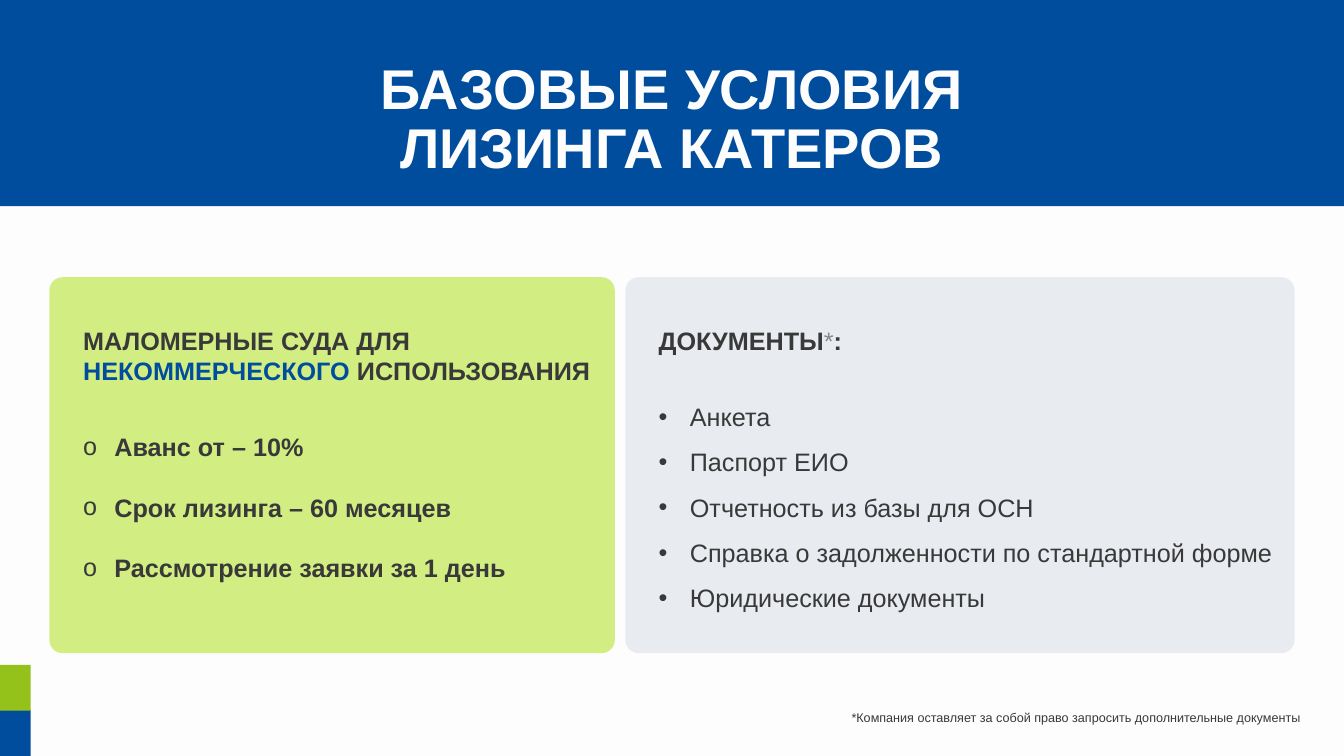
from dataclasses import dataclass
from lxml import etree
from pptx import Presentation
from pptx.dml.color import RGBColor
from pptx.enum.shapes import MSO_SHAPE
from pptx.enum.text import MSO_ANCHOR, MSO_AUTO_SIZE, PP_ALIGN
from pptx.oxml.ns import qn
from pptx.util import Inches, Pt

RECT = MSO_SHAPE.RECTANGLE
ROUND = MSO_SHAPE.ROUNDED_RECTANGLE
TOP = MSO_ANCHOR.TOP
FIXED = MSO_AUTO_SIZE.NONE
CENTER = PP_ALIGN.CENTER
RIGHT = PP_ALIGN.RIGHT
FONT = "Arial"
COLORS = {
    "paper": "FDFDFD", "blue": "004D9E", "green": "94C11A", "lime": "D2EE82",
    "mist": "E8EBF0", "ink": "393939", "gray": "888888",
}


@dataclass
class Box:
    left: float
    top: float
    width: float
    height: float

    def emu(self) -> tuple:
        return tuple(Inches(n) for n in (self.left, self.top, self.width, self.height))


@dataclass
class Card:
    box: Box
    fill: str
    text: Box
    head: list
    items: list
    mark: str
    first: float
    gap: float
    bold: bool


def color(name: str) -> RGBColor:
    return RGBColor.from_string(COLORS[name])


def style(font, size: float, bold: bool, name: str) -> None:
    font.name = FONT
    font.size = Pt(size)
    font.bold = bold
    font.color.rgb = color(name)


def block(slide, box: Box, fill: str, kind=RECT):
    shape = slide.shapes.add_shape(kind, *box.emu())
    shape.shadow.inherit = False
    shape.fill.solid()
    shape.fill.fore_color.rgb = color(fill)
    shape.line.fill.background()
    return shape


def setup(frame) -> None:
    frame.word_wrap = True
    frame.auto_size = FIXED
    frame.vertical_anchor = TOP
    frame.margin_left = frame.margin_right = 0
    frame.margin_top = frame.margin_bottom = 0


def bullet(para, mark: str) -> None:
    props = para._p.get_or_add_pPr()
    props.set("marL", str(Inches(0.62)))
    props.set("indent", str(-Inches(0.62)))
    etree.SubElement(props, qn("a:buFont")).set("typeface", FONT)
    etree.SubElement(props, qn("a:buChar")).set("char", mark)


def draw(slide, card: Card) -> None:
    block(slide, card.box, card.fill, ROUND).adjustments[0] = 0.035
    frame = slide.shapes.add_textbox(*card.text.emu()).text_frame
    setup(frame)
    head = frame.paragraphs[0]
    style(head.font, 36, True, "ink")
    for words, tint, bold in card.head:
        if words == "\n":
            head.add_line_break()
            continue
        run = head.add_run()
        run.text = words
        style(run.font, 36, bold, tint)
    for i, item in enumerate(card.items):
        para = frame.add_paragraph()
        para.text = item
        para.line_spacing = card.gap if i else card.first
        bullet(para, card.mark)
        style(para.font, 36, card.bold, "ink")


CARDS = [
    Card(
        Box(12.41, 5.5, 13.28, 7.46), "mist", Box(13.07, 6.46, 12.42, 6.06),
        [("ДОКУМЕНТЫ", "ink", True), ("*", "gray", False), (":", "ink", True)],
        ["Анкета", "Паспорт ЕИО", "Отчетность из базы для ОСН",
         "Справка о задолженности по стандартной форме", "Юридические документы"],
        "•", 2.5, 1.5, False,
    ),
    Card(
        Box(0.98, 5.5, 11.22, 7.46), "lime", Box(1.65, 6.46, 10.33, 4.96),
        [("МАЛОМЕРНЫЕ СУДА ДЛЯ", "ink", True), ("\n", "ink", True),
         ("НЕКОММЕРЧЕСКОГО", "blue", True), (" ИСПОЛЬЗОВАНИЯ", "ink", True)],
        ["Аванс от – 10%", "Срок лизинга – 60 месяцев", "Рассмотрение заявки за 1 день"],
        "o", 2.5, 2.0, True,
    ),
]


def main() -> None:
    deck = Presentation()
    deck.slide_width = Inches(26.67)
    deck.slide_height = Inches(15)
    slide = deck.slides.add_slide(deck.slide_layouts[5])
    slide.background.fill.solid()
    slide.background.fill.fore_color.rgb = color("paper")

    block(slide, Box(0, 0, 26.67, 4.09), "blue")
    for top, fill in ((14.09, "blue"), (13.19, "green")):
        block(slide, Box(0, top, 0.61, 0.91), fill)

    title = slide.shapes.title
    title.left, title.top, title.width, title.height = Box(6.27, 1.21, 14.13, 2.38).emu()
    title.element.getparent().append(title.element)
    setup(title.text_frame)
    title.text_frame.text = "БАЗОВЫЕ УСЛОВИЯ\nЛИЗИНГА КАТЕРОВ"
    for para in title.text_frame.paragraphs:
        para.alignment = CENTER
        para.line_spacing = Pt(85)
        para.space_before = Pt(0)
        style(para.font, 80, True, "paper")

    frame = slide.shapes.add_textbox(*Box(16.47, 14.07, 9.34, 0.35).emu()).text_frame
    setup(frame)
    note = frame.paragraphs[0]
    note.text = "*Компания оставляет за собой право запросить дополнительные документы"
    note.alignment = RIGHT
    note.line_spacing = 1.07
    style(note.font, 18, False, "ink")

    for card in CARDS:
        draw(slide, card)
    deck.save("out.pptx")


if __name__ == "__main__":
    main()
